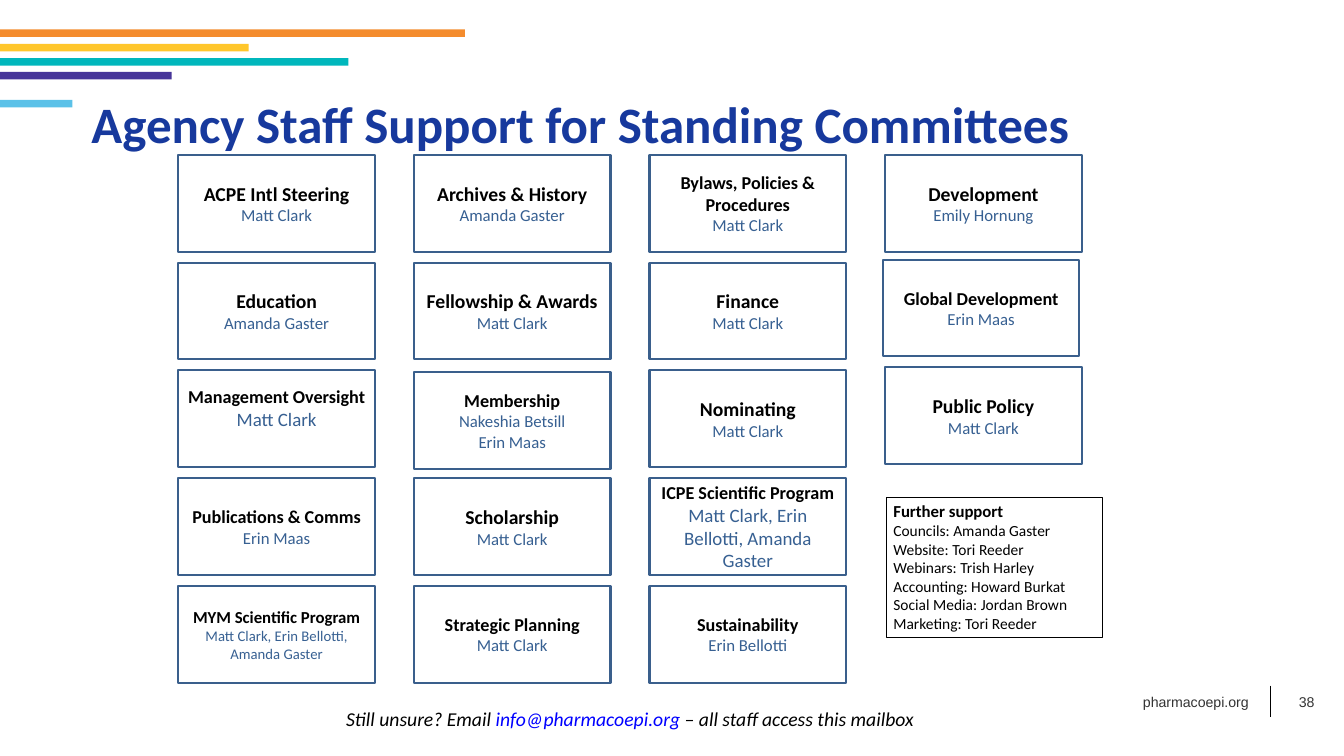
from lxml import etree
from pptx import Presentation
from pptx.dml.color import RGBColor
from pptx.enum.shapes import MSO_CONNECTOR, MSO_SHAPE
from pptx.enum.text import MSO_ANCHOR, PP_ALIGN
from pptx.oxml.ns import qn
from pptx.util import Inches, Pt

RECTANGLE = MSO_SHAPE.RECTANGLE
STRAIGHT = MSO_CONNECTOR.STRAIGHT
TOP, MIDDLE = MSO_ANCHOR.TOP, MSO_ANCHOR.MIDDLE
LEFT, CENTER, RIGHT = PP_ALIGN.LEFT, PP_ALIGN.CENTER, PP_ALIGN.RIGHT

BLACK = RGBColor(0x00, 0x00, 0x00)
GRAY = RGBColor(0x33, 0x33, 0x33)
NAVY = RGBColor(0x17, 0x39, 0x9D)
BORDER_BLUE = RGBColor(0x3A, 0x5F, 0x8C)
STAFF_BLUE = RGBColor(0x37, 0x60, 0x92)
LINK_BLUE = RGBColor(0x00, 0x00, 0xFF)
ORANGE = RGBColor(0xF4, 0x8C, 0x2D)
YELLOW = RGBColor(0xFF, 0xC6, 0x2B)
TEAL = RGBColor(0x00, 0xB7, 0xBC)
PURPLE = RGBColor(0x47, 0x35, 0x99)
SKY = RGBColor(0x5B, 0xC1, 0xE8)

presentation = Presentation()
presentation.slide_width = Inches(17.78)
presentation.slide_height = Inches(10)
slide = presentation.slides.add_slide(presentation.slide_layouts[6])


def add_rectangle(left, top, width, height, fill=None, line=None, line_width=1):
    shape = slide.shapes.add_shape(
        RECTANGLE, Inches(left), Inches(top), Inches(width), Inches(height))
    shape.shadow.inherit = False
    if fill is None:
        shape.fill.background()
    else:
        shape.fill.solid()
        shape.fill.fore_color.rgb = fill
    if line is None:
        shape.line.fill.background()
    else:
        shape.line.color.rgb = line
        shape.line.width = Pt(line_width)
    return shape


def write_text(shape, paragraphs, align=LEFT, anchor=TOP, insets=(0.1, 0.05, 0.1, 0.05)):
    """Fill a shape with paragraphs, each a list of (text, font values) runs."""
    frame = shape.text_frame
    frame.word_wrap = True
    frame.vertical_anchor = anchor
    for side, inset in zip(("left", "top", "right", "bottom"), insets):
        setattr(frame, f"margin_{side}", Inches(inset))
    for index, runs in enumerate(paragraphs):
        paragraph = frame.add_paragraph() if index else frame.paragraphs[0]
        paragraph.alignment = align
        for text, values in runs:
            run = paragraph.add_run()
            run.text = text
            for name, value in {"name": "Calibri", **values}.items():
                if name == "color":
                    run.font.color.rgb = value
                else:
                    setattr(run.font, name, value)


# Coloured stripes and footer divider
stripes = [(0.39, 6.15, ORANGE), (0.58, 3.29, YELLOW), (0.77, 4.61, TEAL),
           (0.95, 2.27, PURPLE), (1.32, 0.96, SKY)]
for top, width, color in stripes:
    add_rectangle(0, top, width, 0.1, fill=color)

divider = slide.shapes.add_connector(
    STRAIGHT, Inches(16.8), Inches(9.07), Inches(16.8), Inches(9.49))
divider.line.color.rgb = BLACK
divider.line.width = Pt(0.5)
etree.SubElement(divider._element.spPr, qn("a:effectLst"))

# Title, footer and contact line
footer_font = {"name": "Arial", "size": Pt(13.5), "color": GRAY}
title_font = {"size": Pt(48.6), "bold": True, "color": NAVY}
contact_font = {"size": Pt(18.7), "italic": True, "color": BLACK}
tight = (0, 0.01, 0, 0)
normal = (0.1, 0.05, 0.1, 0.05)
text_boxes = [
    ((15.12, 9.16, 1.45, 0.24), [("pharmacoepi.org", footer_font)], LEFT, tight),
    ((17.03, 9.16, 0.36, 0.23), [("38", footer_font)], RIGHT, tight),
    ((1.21, 1.21, 14.42, 0.62),
     [("Agency Staff Support for Standing Committees", title_font)], LEFT, tight),
    ((4.48, 9.3, 8.21, 0.42),
     [("Still unsure? Email ", contact_font),
      ("info@pharmacoepi.org ", {**contact_font, "color": LINK_BLUE}),
      ("– all staff access this mailbox", contact_font)], LEFT, normal),
]
for position, runs, align, insets in text_boxes:
    box = slide.shapes.add_textbox(*(Inches(length) for length in position))
    write_text(box, [runs], align, insets=insets)

# Committee grid: name, name size, staff lines, staff size
team = "Matt Clark, Erin Bellotti, Amanda Gaster"
committee_rows = [
    [("ACPE Intl Steering", 18.7, ["Matt Clark"], 16),
     ("Archives & History", 18.7, ["Amanda Gaster"], 16),
     ("Bylaws, Policies & Procedures", 17.3, ["Matt Clark"], 16),
     ("Development", 18.7, ["Emily Hornung"], 16)],
    [("Education", 18.7, ["Amanda Gaster"], 16),
     ("Fellowship & Awards", 18.7, ["Matt Clark"], 16),
     ("Finance", 18.7, ["Matt Clark"], 16),
     ("Global Development", 17.3, ["Erin Maas"], 16)],
    [("Management Oversight", 17.3, ["Matt Clark"], 18),
     ("Membership", 17.3, ["Nakeshia Betsill", "Erin Maas"], 16),
     ("Nominating", 18.7, ["Matt Clark"], 16),
     ("Public Policy", 18.7, ["Matt Clark"], 16)],
    [("Publications & Comms", 17.3, ["Erin Maas"], 16),
     ("Scholarship", 18.7, ["Matt Clark"], 16),
     ("ICPE Scientific Program", 17.3, [team], 18)],
    [("MYM Scientific Program", 16, [team], 14),
     ("Strategic Planning", 17.3, ["Matt Clark"], 16),
     ("Sustainability", 17.3, ["Erin Bellotti"], 16)],
]
nudges = {"Global Development": (-0.03, -0.04), "Public Policy": (0, -0.04),
          "Membership": (0, 0.02)}
bottom_insets = {"Management Oversight": 0.34}
first_left, last_left = 2.36, 11.71
first_top, last_top = 2.05, 7.75
column_step = (last_left - first_left) / 3
row_step = (last_top - first_top) / 4

for row, committees in enumerate(committee_rows):
    for column, (committee, name_size, staff, staff_size) in enumerate(committees):
        shift_x, shift_y = nudges.get(committee, (0, 0))
        card = add_rectangle(first_left + column * column_step + shift_x,
                             first_top + row * row_step + shift_y,
                             2.6, 1.28, line=BORDER_BLUE, line_width=2)
        name_font = {"size": Pt(name_size), "bold": True, "color": BLACK}
        staff_font = {"size": Pt(staff_size), "bold": False, "color": STAFF_BLUE}
        paragraphs = [[(committee, name_font)]]
        paragraphs += [[(person, staff_font)] for person in staff]
        write_text(card, paragraphs, CENTER, MIDDLE,
                   (0.1, 0.05, 0.1, bottom_insets.get(committee, 0.05)))

# Further support
support_box = add_rectangle(11.72, 6.58, 2.87, 1.85, line=BLACK, line_width=0.75)
support_lines = ["Councils: Amanda Gaster", "Website: Tori Reeder",
                 "Webinars: Trish Harley", "Accounting: Howard Burkat",
                 "Social Media: Jordan Brown", "Marketing: Tori Reeder"]
heading_font = {"size": Pt(16), "bold": True, "color": BLACK}
support_font = {"size": Pt(14.7), "bold": False, "color": BLACK}
write_text(support_box, [[("Further support", heading_font)]]
           + [[(line, support_font)] for line in support_lines])

presentation.save("out.pptx")
